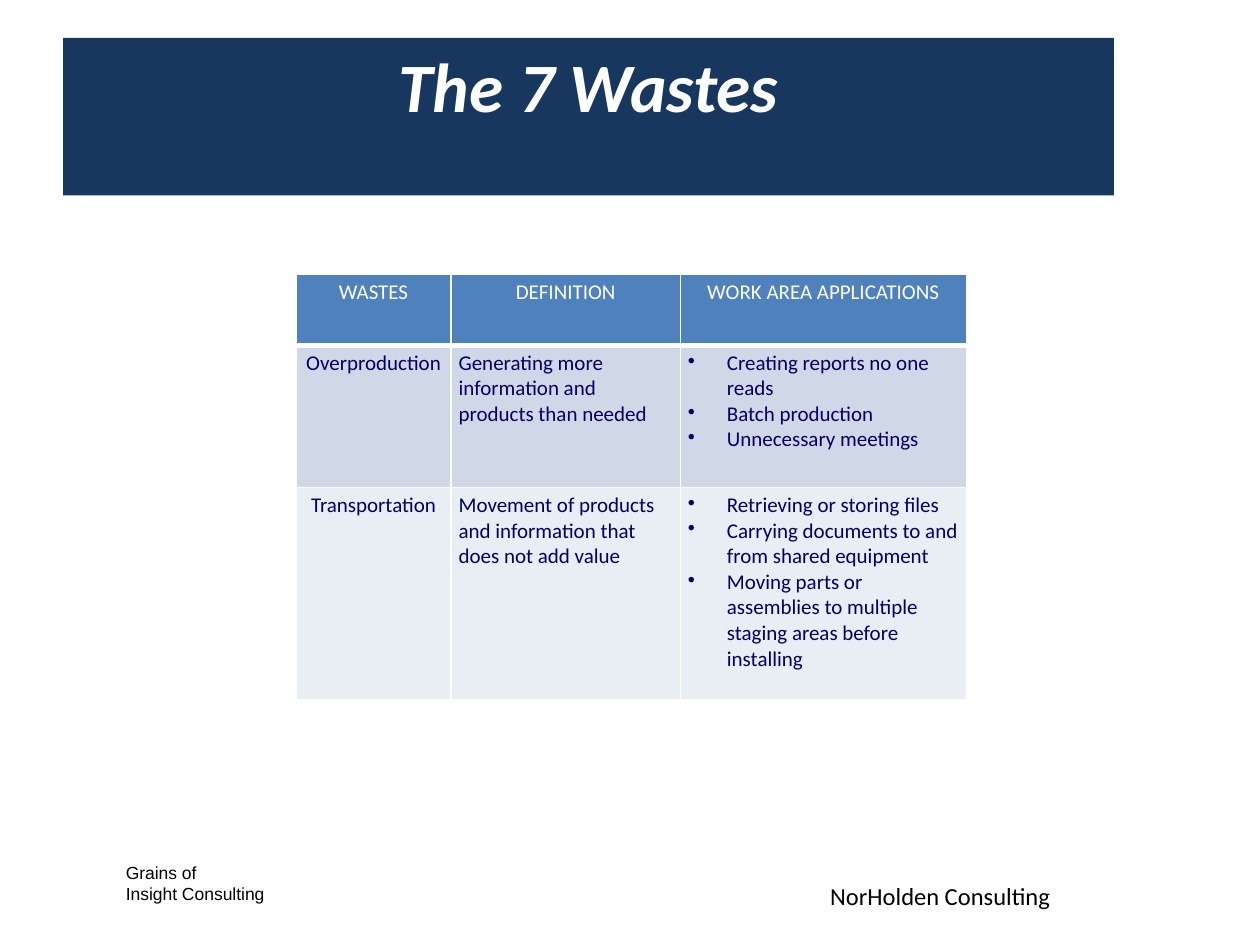
import dataclasses

import pptx
import pptx.dml.color
import pptx.enum.text
import pptx.oxml
import pptx.oxml.ns
import pptx.util
from pptx.util import Inches

ALIGN = pptx.enum.text.PP_ALIGN


@dataclasses.dataclass(frozen=True)
class Theme:
    navy: str = "17375E"
    blue: str = "4F81BD"
    ink: str = "000066"
    white: str = "FFFFFF"
    black: str = "000000"
    bands: tuple = ("D0D8E8", "E9EDF4")
    font: str = "Calibri"
    footer_font: str = "Arial"
    title_size: float = 39.6
    table_size: float = 12
    name_size: float = 14
    footer_size: float = 10


class SlideBuilder:
    """Holds the theme and the current slide, and adds each kind of element."""

    def __init__(self, slide, theme):
        self.slide = slide
        self.theme = theme

    def add_run(self, paragraph, text, size, color, font=None, bold=False, italic=False):
        run = paragraph.add_run()
        run.text = text
        run.font.name = font or self.theme.font
        run.font.size = pptx.util.Pt(size)
        run.font.bold = bold
        run.font.italic = italic
        run.font.color.rgb = pptx.dml.color.RGBColor.from_string(color)

    def set_fill(self, target, color):
        target.fill.solid()
        target.fill.fore_color.rgb = pptx.dml.color.RGBColor.from_string(color)

    def set_title(self, text, left, top, width, height):
        title = self.slide.shapes.title
        title.left, title.top = Inches(left), Inches(top)
        title.width, title.height = Inches(width), Inches(height)
        self.set_fill(title, self.theme.navy)
        frame = title.text_frame
        frame.word_wrap = True
        frame.auto_size = pptx.enum.text.MSO_AUTO_SIZE.NONE
        frame.vertical_anchor = pptx.enum.text.MSO_ANCHOR.TOP
        frame.margin_left = frame.margin_right = Inches(0.07)
        frame.margin_top = frame.margin_bottom = Inches(0.04)
        paragraph = frame.paragraphs[0]
        paragraph.alignment = ALIGN.CENTER
        self.add_run(paragraph, text, self.theme.title_size, self.theme.white,
                     bold=True, italic=True)
        paragraph.add_line_break()

    def add_text(self, lines, left, top, width, height, size, font):
        box = self.slide.shapes.add_textbox(
            Inches(left), Inches(top), Inches(width), Inches(height))
        frame = box.text_frame
        frame.word_wrap = True
        for index, line in enumerate(lines):
            paragraph = frame.add_paragraph() if index else frame.paragraphs[0]
            self.add_run(paragraph, line, size, self.theme.black, font)

    def set_borders(self, cell, bottom_width):
        properties = cell._tc.get_or_add_tcPr()
        widths = {"lnL": 1, "lnR": 1, "lnT": 1, "lnB": bottom_width}
        for index, (side, width) in enumerate(widths.items()):
            properties.insert(index, pptx.oxml.parse_xml(
                f'<a:{side} {pptx.oxml.ns.nsdecls("a")} w="{pptx.util.Pt(width)}">'
                f'<a:solidFill><a:srgbClr val="{self.theme.white}"/></a:solidFill></a:{side}>'))

    def add_bullet(self, paragraph):
        properties = paragraph._p.get_or_add_pPr()
        properties.set("marL", str(Inches(0.31)))
        properties.set("indent", str(-Inches(0.31)))
        properties.append(pptx.oxml.parse_xml(
            f'<a:buChar {pptx.oxml.ns.nsdecls("a")} char="•"/>'))

    def fill_cell(self, cell, content, fill, color, centered, bottom_width=1):
        self.set_fill(cell, fill)
        self.set_borders(cell, bottom_width)
        cell.margin_left = cell.margin_right = Inches(0.06)
        cell.margin_top = cell.margin_bottom = Inches(0.04)
        bulleted = isinstance(content, list)
        for index, text in enumerate(content if bulleted else [content]):
            frame = cell.text_frame
            paragraph = frame.add_paragraph() if index else frame.paragraphs[0]
            if bulleted:
                self.add_bullet(paragraph)
            paragraph.alignment = ALIGN.CENTER if centered else ALIGN.LEFT
            self.add_run(paragraph, text, self.theme.table_size, color)

    def add_table(self, rows, left, top, widths, heights):
        table = self.slide.shapes.add_table(
            len(rows), len(widths), Inches(left), Inches(top),
            Inches(sum(widths)), Inches(sum(heights))).table
        table.first_row = table.horz_banding = False
        for column, width in zip(table.columns, widths):
            column.width = Inches(width)
        for row, height in zip(table.rows, heights):
            row.height = Inches(height)
        header, *body = rows
        for column, text in enumerate(header):
            self.fill_cell(table.cell(0, column), text, self.theme.blue,
                           self.theme.white, True, bottom_width=3)
        for index, contents in enumerate(body):
            for column, content in enumerate(contents):
                self.fill_cell(table.cell(index + 1, column), content,
                               self.theme.bands[index % 2], self.theme.ink, column == 0)


WASTES = [
    ("WASTES", "DEFINITION", "WORK AREA APPLICATIONS"),
    ("Overproduction", "Generating more information and products than needed",
     ["Creating reports no one reads", "Batch production", "Unnecessary meetings"]),
    ("Transportation", "Movement of products and information that does not add value",
     ["Retrieving or storing files",
      "Carrying documents to and from shared equipment",
      "Moving parts or assemblies to multiple staging areas before installing"]),
]


def main():
    presentation = pptx.Presentation()
    presentation.slide_width, presentation.slide_height = Inches(10), Inches(7.5)
    theme = Theme()
    slide = presentation.slides.add_slide(presentation.slide_layouts[5])
    builder = SlideBuilder(slide, theme)
    builder.add_text(["Grains of", "Insight Consulting"], 0.9, 6.79, 2.35, 0.44,
                     theme.footer_size, theme.footer_font)
    builder.add_text(["NorHolden Consulting"], 6.49, 6.94, 2.92, 0.23,
                     theme.name_size, theme.font)
    builder.set_title("The 7 Wastes", 0.5, 0.3, 8.34, 1.25)
    builder.add_table(WASTES, 2.35, 2.18, [1.23, 1.82, 2.27], [0.56, 1.13, 1.68])
    presentation.save("out.pptx")


if __name__ == "__main__":
    main()
